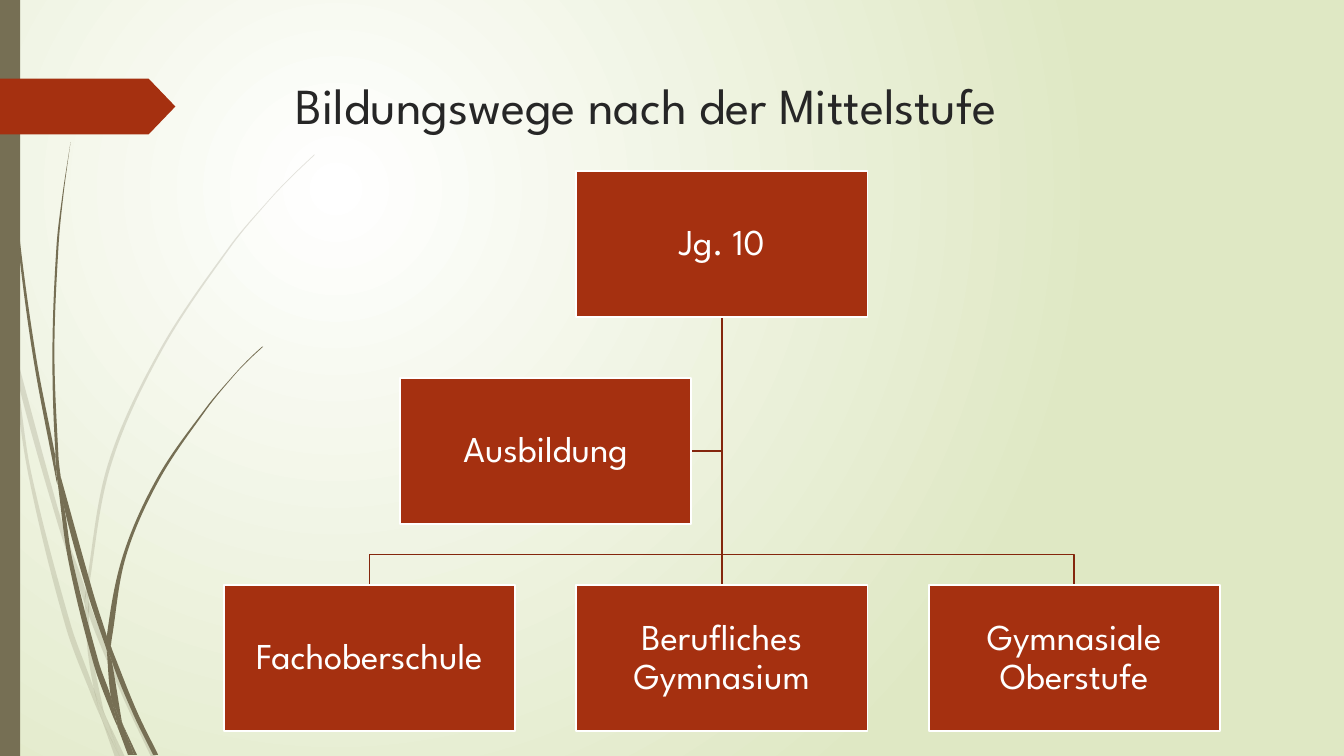
from dataclasses import dataclass
from math import dist

from lxml.etree import SubElement
from pptx import Presentation
from pptx.dml.color import RGBColor
from pptx.enum.shapes import MSO_CONNECTOR, MSO_SHAPE
from pptx.enum.text import MSO_ANCHOR, MSO_AUTO_SIZE, PP_ALIGN
from pptx.oxml.ns import qn
from pptx.util import Pt


@dataclass(frozen=True)
class Theme:
    font: str = "League Spartan"
    title: int = 36
    label: int = 26
    ink: str = "262626"
    white: str = "FFFFFF"
    green: str = "DFE8C4"
    olive: str = "766F54"
    red: str = "A53010"
    line: str = "84260D"


THEME = Theme()
WIDE, HIGH = 960, 540

# Chart grid: three columns and three rows of equal boxes
BOX_W, BOX_H = 208, 104
COLS = [160 + 251.7 * i for i in range(3)]
ROWS = [122.3 + 147.9 * i for i in range(3)]
SIDE = (COLS[0] + COLS[1]) / 2

# Grass: outline knots of each piece, in units of GRAIN points
GRAIN = 0.72
PALE = [
    [(11, 350), (9, 322), (0, 282), (0, 299), (10, 344)],
    [(58, 522), (84, 599), (85, 586), (62, 520), (14, 345), (17, 376)],
    [(92, 607), (88, 596), (88, 610), (123, 694), (150, 751), (155, 751), (127, 692)],
    [(119, 751), (124, 751), (105, 711)],
    [(93, 683), (70, 619), (31, 469), (17, 376), (11, 350), (28, 470), (65, 621),
     (92, 693), (101, 714), (99, 707)],
    [(84, 599), (87, 646), (93, 683), (96, 692), (105, 711), (103, 706), (91, 646),
     (88, 610), (88, 608)],
    [(88, 584), (110, 462), (160, 349), (229, 245), (268, 198), (290, 175), (312, 154),
     (312, 153), (289, 175), (268, 197), (228, 244), (158, 348), (107, 461), (85, 584),
     (85, 586), (88, 596)],
    [(101, 714), (114, 751), (119, 751)],
    [(88, 608), (88, 610), (88, 596), (85, 586), (84, 599)],
    [(96, 692), (93, 683), (99, 707), (101, 714), (119, 751), (105, 711)],
]
DARK = [
    [(7, 110), (17, 233), (33, 355), (56, 477), (57, 481), (55, 457), (55, 453), (36, 355),
     (19, 232), (8, 109), (5, 48), (4, 0), (3, 0), (4, 48)],
    [(88, 592), (106, 645), (106, 633), (106, 631), (93, 590), (60, 472), (64, 505)],
    [(113, 649), (110, 641), (111, 656), (132, 708), (152, 749), (157, 749), (136, 706)],
    [(110, 691), (98, 657), (72, 556), (64, 505), (57, 477), (68, 557), (93, 659),
     (111, 708), (117, 722), (116, 717)],
    [(60, 472), (58, 453), (54, 349), (58, 245), (63, 193), (70, 141), (62, 193), (56, 245),
     (52, 349), (55, 449)],
    [(133, 749), (136, 749), (122, 719)],
    [(57, 477), (64, 505), (60, 472), (55, 449), (55, 453)],
    [(111, 633), (125, 552), (158, 476), (205, 406), (231, 374), (245, 359), (261, 344),
     (260, 344), (245, 358), (231, 373), (204, 405), (156, 474), (122, 551), (106, 631),
     (110, 641)],
    [(117, 722), (127, 749), (131, 749)],
    [(106, 645), (110, 691), (116, 706), (122, 719), (121, 716), (111, 656), (109, 651)],
    [(106, 645), (109, 651), (111, 656), (110, 641), (106, 631), (106, 633)],
    [(116, 706), (110, 691), (116, 717), (117, 722), (130, 749), (133, 749), (122, 719)],
]


def tint(code):
    return RGBColor.from_string(code)


def write(frame, text, size, color, align=PP_ALIGN.LEFT, anchor=MSO_ANCHOR.TOP,
          inset=None, space=1.0):
    frame.word_wrap = True
    frame.auto_size = MSO_AUTO_SIZE.NONE
    frame.vertical_anchor = anchor
    if inset is not None:
        frame.margin_left = frame.margin_right = Pt(inset)
        frame.margin_top = frame.margin_bottom = Pt(inset)
    para = frame.paragraphs[0]
    para.alignment, para.line_spacing = align, space
    run = para.add_run()
    run.text = text
    run.font.name, run.font.size = THEME.font, Pt(size)
    run.font.color.rgb = tint(color)


def paint(shape, fill=None, line=None, alpha=None):
    shape.shadow.inherit = False
    if fill:
        shape.fill.solid()
        shape.fill.fore_color.rgb = tint(fill)
    else:
        shape.fill.background()
    if line:
        shape.line.color.rgb = tint(line)
        shape.line.width = Pt(1.25)
    else:
        shape.line.fill.background()
    if alpha:
        color = shape.fill._xPr.find(".//" + qn("a:srgbClr"))
        SubElement(color, qn("a:alpha")).set("val", str(alpha * 1000))


def block(slide, kind, left, top, width, height, **style):
    shape = slide.shapes.add_shape(kind, Pt(left), Pt(top), Pt(width), Pt(height))
    paint(shape, **style)
    return shape


def trace(slide, points, close, **style):
    spots = [(Pt(x), Pt(y)) for x, y in points]
    pen = slide.shapes.build_freeform(*spots[0])
    pen.add_line_segments(spots[1:], close=close)
    shape = pen.convert_to_shape()
    paint(shape, **style)
    return shape


def unit(a, b):
    gap = dist(a, b) or 1
    return (b[0] - a[0]) / gap, (b[1] - a[1]) / gap


def lean(a, b, c):
    """Give the tangent at b, or None where the outline has a corner."""
    (p, q), (r, s) = unit(a, b), unit(b, c)
    return unit(a, c) if p * r + q * s > 0.7 else None


def blade(slide, knots, **style):
    points = [(x * GRAIN, y * GRAIN) for x, y in knots]
    shape = trace(slide, points + points[:1], True, **style)
    # Turn the straight sides into curves
    node = shape._element.find(".//" + qn("a:path"))
    ring = [(int(pt.get("x")), int(pt.get("y"))) for pt in node.iter(qn("a:pt"))][:-1]
    size = len(ring)
    for i, side in enumerate(node.findall(qn("a:lnTo"))):
        a, b, c, d = (ring[(i + k) % size] for k in (-1, 0, 1, 2))
        reach = dist(b, c) / 3
        out = lean(a, b, c) or unit(b, c)
        into = lean(b, c, d) or unit(b, c)
        grips = [(b[0] + out[0] * reach, b[1] + out[1] * reach),
                 (c[0] - into[0] * reach, c[1] - into[1] * reach), c]
        side.tag = qn("a:cubicBezTo")
        side.remove(side[0])
        for x, y in grips:
            pt = SubElement(side, qn("a:pt"))
            pt.set("x", str(round(x)))
            pt.set("y", str(round(y)))


def card(slide, left, top, text):
    shape = block(slide, MSO_SHAPE.RECTANGLE, left, top, BOX_W, BOX_H,
                  fill=THEME.red, line=THEME.white)
    write(shape.text_frame, text, THEME.label, THEME.white, align=PP_ALIGN.CENTER,
          anchor=MSO_ANCHOR.MIDDLE, inset=1.4, space=0.9)


def stem(slide, x, top, end):
    link = slide.shapes.add_connector(MSO_CONNECTOR.STRAIGHT, Pt(x), Pt(top), Pt(x), Pt(end))
    link.line.color.rgb = tint(THEME.line)
    link.line.width = Pt(1.25)
    SubElement(link._element.spPr, qn("a:effectLst"))


def glow(slide):
    fill = slide.background.fill
    fill.gradient()
    for stop, code in zip(fill.gradient_stops, (THEME.white, THEME.green)):
        stop.color.rgb = tint(code)
    grad = slide.background._cSld.find(".//" + qn("a:gradFill"))
    grad.remove(grad.find(qn("a:lin")))
    ring = SubElement(grad, qn("a:path"))
    ring.set("path", "circle")
    focus = SubElement(ring, qn("a:fillToRect"))
    for side, part in zip("ltrb", (50, 50, 100, 100)):
        focus.set(side, str(part * 1000))


def main():
    deck = Presentation()
    deck.slide_width, deck.slide_height = Pt(WIDE), Pt(HIGH)
    slide = deck.slides.add_slide(deck.slide_layouts[5])

    # Backdrop: glow, grass, side bar and tag
    glow(slide)
    for group, alpha in ((PALE, 20), (DARK, None)):
        for knots in group:
            blade(slide, knots, fill=THEME.olive, alpha=alpha)
    block(slide, MSO_SHAPE.RECTANGLE, 0, 0, 14.4, HIGH, fill=THEME.olive)
    tag = block(slide, MSO_SHAPE.PENTAGON, 0, 56.2, 125.3, 39.8, fill=THEME.red)
    tag.adjustments[0] = 0.48

    # Title
    title = slide.shapes.title
    title.left, title.top, title.width, title.height = Pt(204), Pt(49), Pt(702), Pt(101)
    write(title.text_frame, "Bildungswege nach der Mittelstufe", THEME.title, THEME.ink)

    # Links from the top box
    mid, foot = COLS[1] + BOX_W / 2, ROWS[0] + BOX_H
    bend, half = ROWS[2] - 22, ROWS[1] + BOX_H / 2
    trace(slide, [(mid, foot), (mid, half), (SIDE + BOX_W, half)], False, line=THEME.line)
    for x in (COLS[2] + BOX_W / 2, COLS[0] + BOX_W / 2):
        trace(slide, [(mid, foot), (mid, bend), (x, bend), (x, ROWS[2])], False, line=THEME.line)
    stem(slide, mid, foot, ROWS[2])

    # Boxes
    card(slide, COLS[1], ROWS[0], "Jg. 10")
    for col, text in zip(COLS, ("Fachoberschule", "Berufliches Gymnasium", "Gymnasiale Oberstufe")):
        card(slide, col, ROWS[2], text)
    card(slide, SIDE, ROWS[1], "Ausbildung")

    deck.save("out.pptx")


if __name__ == "__main__":
    main()
